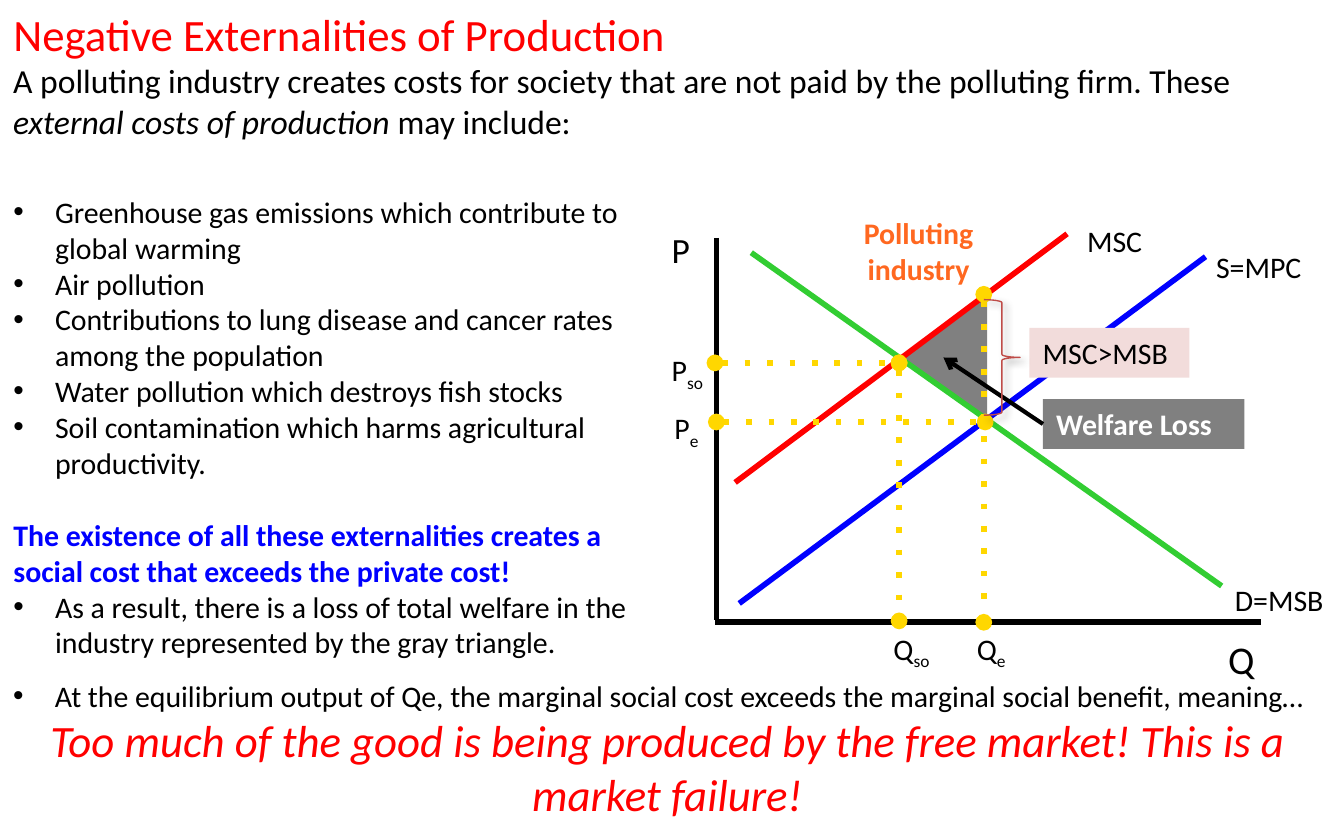
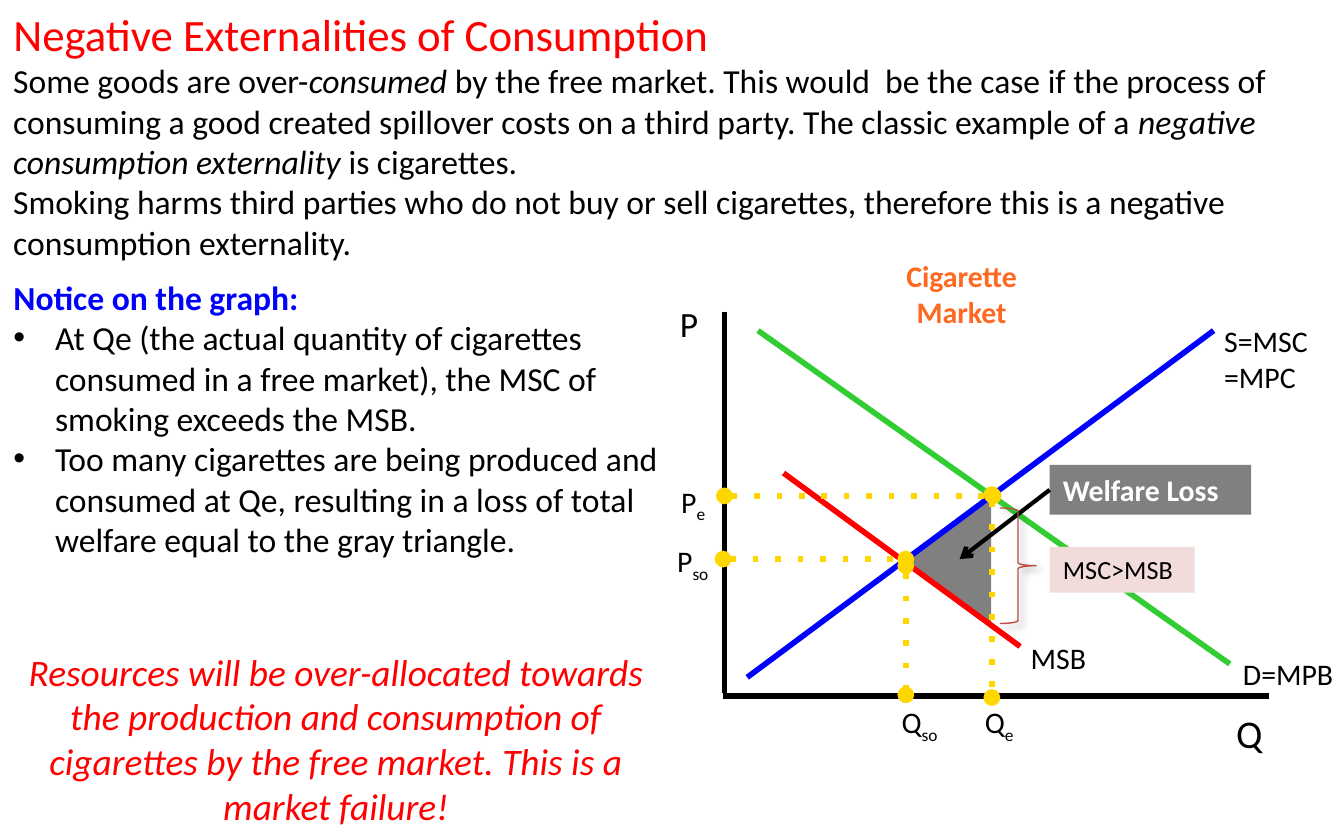
from lxml.etree import SubElement
from pptx import Presentation
from pptx.dml.color import RGBColor
from pptx.enum.shapes import MSO_CONNECTOR, MSO_SHAPE as SHAPE
from pptx.enum.text import MSO_ANCHOR, MSO_AUTO_SIZE, PP_ALIGN as ALIGN
from pptx.oxml.ns import qn
from pptx.util import Inches, Pt

FONT = "Calibri"
BLACK, WHITE, RED, BLUE = "000000", "FFFFFF", "FF0000", "0000FF"
GREEN, GOLD, ORANGE, GRAY = "32CD32", "FFD700", "FF6820", "808080"
PINK, BRACE_RED = "F2DCDB", "BF4C48"
hex_color = RGBColor.from_string

BULLET = {"bullet": True}
HEADING = {"color": BLUE, "bold": True}
CONCLUSION = {"color": RED, "italic": True, "align": ALIGN.CENTER}


def write(shape, text, size=16, color=BLACK, bold=False, italic=False,
          align=ALIGN.LEFT, bullet=False, before=0):
    """Add one paragraph; *stars* mark italics and an underscore starts a subscript."""
    frame = shape.text_frame
    frame.word_wrap = True
    frame.auto_size = MSO_AUTO_SIZE.NONE
    frame.vertical_anchor = MSO_ANCHOR.TOP
    paragraph = frame.add_paragraph() if frame.text else frame.paragraphs[0]
    paragraph.alignment = align
    paragraph.space_before = Pt(before)
    props = paragraph._p.get_or_add_pPr()
    indent = Inches(0.31) if bullet else 0
    props.set("marL", str(indent))
    props.set("indent", str(-indent))
    if bullet:
        SubElement(props, qn("a:buFont"), typeface="Arial")
        SubElement(props, qn("a:buChar"), char="•")
    else:
        SubElement(props, qn("a:buNone"))

    main, _, subscript = text.partition("_")
    pieces = [(piece, i % 2 == 1, False) for i, piece in enumerate(main.split("*"))]
    pieces.append((subscript, False, True))
    for piece, starred, lowered in pieces:
        if not piece:
            continue
        run = paragraph.add_run()
        run.text = piece
        font = run.font
        font.name, font.size, font.bold = FONT, Pt(size), bold
        font.italic = italic or starred
        font.color.rgb = hex_color(color)
        if lowered:
            run._r.get_or_add_rPr().set("baseline", "-25000")


def draw_line(shapes, x1, y1, x2, y2, color=BLACK, width=3, dash=None, head=None, tail=None):
    line = shapes.add_connector(MSO_CONNECTOR.STRAIGHT, *map(Inches, (x1, y1, x2, y2)))
    line.line.color.rgb = hex_color(color)
    line.line.width = Pt(width)
    sp_pr = line.element.spPr
    outline = sp_pr.find(qn("a:ln"))
    for tag, key, value in (("prstDash", "val", dash), ("headEnd", "type", head),
                            ("tailEnd", "type", tail)):
        if value:
            SubElement(outline, qn(f"a:{tag}"), {key: value})
    SubElement(sp_pr, qn("a:effectLst"))
    return line


PRODUCTION = {
    "title": "Negative Externalities of Production",
    "intro": ["A polluting industry creates costs for society that are not paid by the "
              "polluting firm. These *external costs of production *may include:"],
    "intro_height": 0.7,
    "body_box": (0, 1.39, 5, 3.6),
    "body": [
        ("Greenhouse gas emissions which contribute to global warming", BULLET),
        ("Air pollution", BULLET),
        ("Contributions to lung disease and cancer rates among the population", BULLET),
        ("Water pollution which destroys fish stocks", BULLET),
        ("Soil contamination which harms agricultural productivity.", BULLET),
        ("The existence of all these externalities creates a social cost that exceeds "
         "the private cost!", HEADING | {"before": 19.5}),
        ("As a result, there is a loss of total welfare in the industry represented by "
         "the gray triangle.", BULLET),
    ],
    "closing": [
        ("At the equilibrium output of Qe, the marginal social cost exceeds the marginal "
         "social benefit, meaning…", BULLET),
        ("Too much of the good is being produced by the free market! This is a market "
         "failure!", CONCLUSION | {"size": 24}),
    ],
    "shift": (0, 0),
    "welfare_triangle": (6.55, 2.33),
    "curves": [((5.59, 1.88, 9.09, 4.36), GREEN), ((5.5, 4.49, 8.97, 1.91), BLUE),
               ((5.47, 3.59, 7.94, 1.74), RED)],
    "guides": [(5.32, 2.7, 6.69, 2.7), (6.69, 2.7, 6.69, 4.62),
               (5.33, 3.14, 7.33, 3.14), (7.32, 2.19, 7.32, 4.63)],
    "curve_labels": [("D=MSB", 9.09, 4.28), ("S=MPC", 8.95, 1.8), ("MSC", 7.99, 1.61)],
    "price_labels": [("P_so", 4.9, 2.57), ("P_e", 4.92, 3)],
    "market": ("Polluting industry", 6.15, 1.55),
    "gap_box": (7.66, 2.44, 1.19, 0.37),
    "gap_size": 16,
    "loss_box": (7.76, 2.97),
    "loss_target": (7.02, 2.66),
    "brace": (7.32, 2.23),
}

CONSUMPTION = {
    "title": "Negative Externalities of Consumption",
    "intro": ["Some goods are over-*consumed* by the free market. This would  be the case if "
              "the process of consuming a good created spillover costs on a third party. The "
              "classic example of a *negative consumption externality *is cigarettes.",
              "Smoking harms third parties who do not buy or sell cigarettes, therefore this "
              "is a negative consumption externality."],
    "intro_height": 1.61,
    "body_box": (0, 2.01, 5, 4.24),
    "body": [
        ("Notice on the graph:", HEADING | {"size": 18}),
        ("At Qe (the actual quantity of cigarettes consumed in a free market), the MSC of "
         "smoking exceeds the MSB.", BULLET | {"size": 18}),
        ("Too many cigarettes are being produced and consumed at Qe, resulting in a loss of "
         "total welfare equal to the gray triangle.", BULLET | {"size": 18}),
        ("Resources will be over-allocated towards the production and consumption of "
         "cigarettes by the free market. This is a market failure!",
         CONCLUSION | {"size": 20, "before": 48}),
    ],
    "closing": [],
    "shift": (0.06, 0.55),
    "welfare_triangle": (6.58, 3.85),
    "curves": [((5.64, 2.46, 9.15, 4.94), GREEN), ((5.56, 5.04, 9.03, 2.46), BLUE),
               ((5.83, 3.52, 7.59, 4.81), RED)],
    "guides": [(5.38, 4.16, 6.74, 4.16), (6.74, 4.21, 6.74, 5.17),
               (5.39, 3.69, 7.39, 3.69), (7.38, 3.68, 7.38, 5.19)],
    "curve_labels": [("D=MPB", 9.15, 4.83), ("S=MSC\n=MPC", 9.01, 2.35), ("MSB", 7.57, 4.71)],
    "price_labels": [("P_so", 4.94, 3.99), ("P_e", 4.97, 3.55)],
    "market": ("Cigarette Market", 6.47, 1.87),
    "gap_box": (7.81, 4.07, 1.08, 0.34),
    "gap_size": 14,
    "loss_box": (7.81, 3.46),
    "loss_target": (7.14, 4.16),
    "brace": (7.44, 3.78),
}

prs = Presentation()
prs.slide_width, prs.slide_height = Inches(10), Inches(6.25)

for topic in (PRODUCTION, CONSUMPTION):
    slide = prs.slides.add_slide(prs.slide_layouts[1])
    title, body = slide.shapes.title, slide.placeholders[1]
    for holder, box in ((title, (0, 0, 10, 0.46)), (body, topic["body_box"])):
        holder.left, holder.top, holder.width, holder.height = map(Inches, box)
    write(title, topic["title"], size=24, color=RED)
    for text, style in topic["body"]:
        write(body, text, **style)

    intro = slide.shapes.add_textbox(0, Inches(0.4), Inches(10), Inches(topic["intro_height"]))
    for text in topic["intro"]:
        write(intro, text, size=18)
    if topic["closing"]:
        closing = slide.shapes.add_textbox(0, Inches(4.99), Inches(9.93), Inches(1.18))
        for text, style in topic["closing"]:
            write(closing, text, **style)

    # Market diagram
    diagram = slide.shapes.add_group_shape().shapes
    dx, dy = topic["shift"]
    x, y = topic["welfare_triangle"]
    triangle = diagram.add_shape(SHAPE.ISOSCELES_TRIANGLE, *map(Inches, (x, y, 0.93, 0.66)))
    triangle.rotation = 270
    triangle.fill.solid()
    triangle.fill.fore_color.rgb = hex_color(GRAY)
    triangle.line.fill.background()
    triangle.shadow.inherit = False

    draw_line(diagram, 5.33 + dx, 1.77 + dy, 5.33 + dx, 4.61 + dy)
    draw_line(diagram, 5.32 + dx, 4.63 + dy, 9.38 + dx, 4.63 + dy)
    for ends, color in topic["curves"]:
        draw_line(diagram, *ends, color=color)
    for ends in topic["guides"]:
        draw_line(diagram, *ends, color=GOLD, dash="dot", head="oval", tail="oval")

    axis_labels = [("P", 4.9, 1.65, 19), ("Q", 9.04, 4.68, 21),
                   ("Q_e", 7.17, 4.64, 16), ("Q_so", 6.55, 4.64, 16)]
    labels = [(text, x + dx, y + dy, 0.66, size) for text, x, y, size in axis_labels]
    labels += [(*label, 0.66, 16) for label in topic["price_labels"]]
    labels += [(*label, 1.01, 16) for label in topic["curve_labels"]]
    for text, x, y, width, size in labels:
        lines = text.split("\n")
        height = 0.1 + 0.27 * len(lines)
        label = diagram.add_textbox(*map(Inches, (x, y, width, height)))
        for line in lines:
            write(label, line, size=size)

    name, x, y = topic["market"]
    market = diagram.add_textbox(*map(Inches, (x, y, 1.37, 0.64)))
    write(market, name, color=ORANGE, bold=True, align=ALIGN.CENTER)

    callouts = [
        ("MSC>MSB", topic["gap_box"], PINK, {"size": topic["gap_size"]}),
        ("Welfare Loss", (*topic["loss_box"], 1.5, 0.37), GRAY, {"color": WHITE, "bold": True}),
    ]
    for text, box, fill, style in callouts:
        callout = diagram.add_shape(SHAPE.RECTANGLE, *map(Inches, box))
        callout.fill.solid()
        callout.fill.fore_color.rgb = hex_color(fill)
        callout.line.fill.background()
        callout.shadow.inherit = False
        write(callout, text, **style)

    # The welfare loss box is the last callout drawn
    x, y = topic["loss_box"]
    pointer = draw_line(diagram, x, y + 0.18, *topic["loss_target"], width=2.25, tail="arrow")
    pointer.begin_connect(callout, 1)

    brace = diagram.add_shape(SHAPE.RIGHT_BRACE, *map(Inches, (*topic["brace"], 0.27, 0.86)))
    brace.fill.background()
    brace.line.color.rgb = hex_color(BRACE_RED)
    brace.line.width = Pt(0.75)
    brace.shadow.inherit = False
    effects = brace.element.spPr.find(qn("a:effectLst"))
    shadow = SubElement(effects, qn("a:outerShdw"), blurRad=str(Pt(4)), dist=str(Pt(3)),
                        dir="2700000", algn="tl", rotWithShape="0")
    shadow_color = SubElement(shadow, qn("a:srgbClr"), val=BLACK)
    SubElement(shadow_color, qn("a:alpha"), val="40000")

prs.save("out.pptx")
